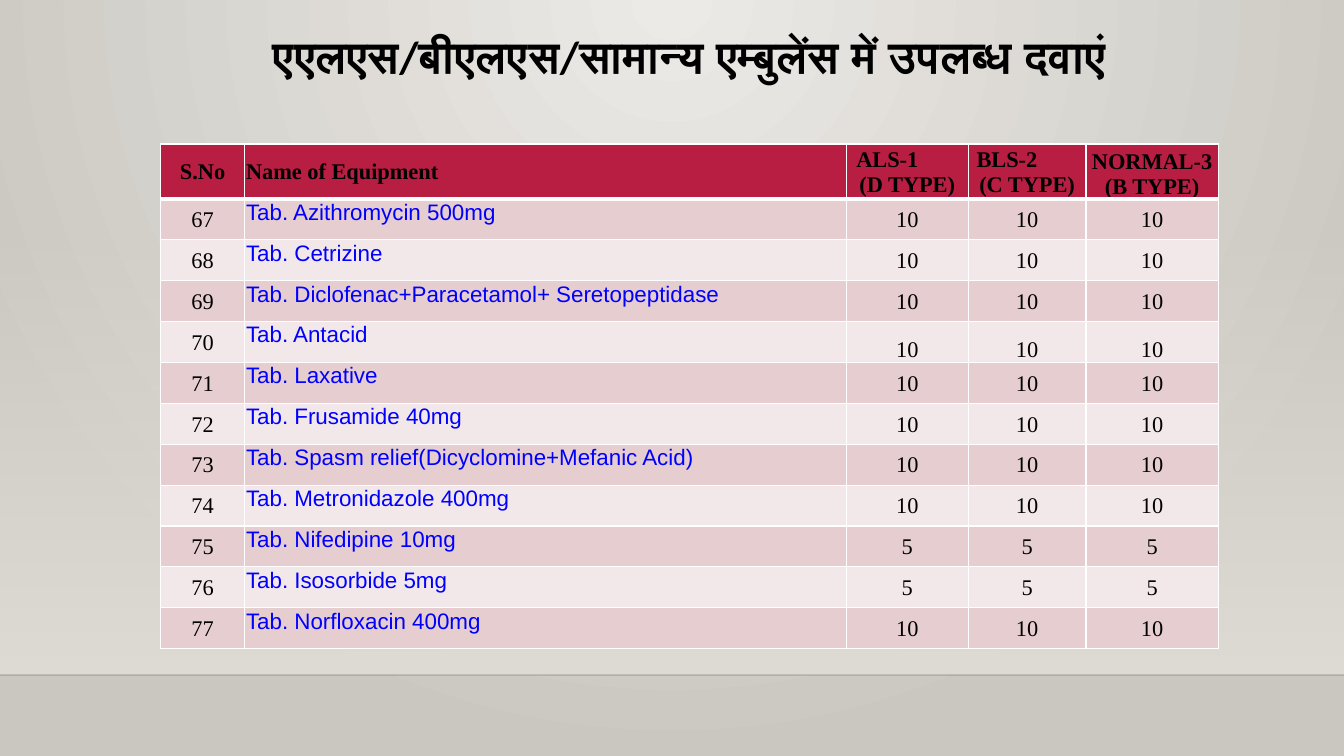
from lxml import etree
from pptx import Presentation
from pptx.dml.color import RGBColor
from pptx.enum.shapes import MSO_CONNECTOR, MSO_SHAPE
from pptx.enum.text import MSO_ANCHOR, PP_ALIGN
from pptx.oxml.ns import qn
from pptx.util import Cm, Pt

LEFT, CENTER = PP_ALIGN.LEFT, PP_ALIGN.CENTER
TOP, MIDDLE, BOTTOM = MSO_ANCHOR.TOP, MSO_ANCHOR.MIDDLE, MSO_ANCHOR.BOTTOM
RECTANGLE, STRAIGHT = MSO_SHAPE.RECTANGLE, MSO_CONNECTOR.STRAIGHT

COLORS = {
    "center": "ECEAE7", "edge": "CAC7C1", "wall": "DFDBD5", "floor_line": "000001",
    "text": "000000", "medicine": "0000FF", "border": "FFFFFF",
    "header": "B71E42", "odd_row": "E6CDCF", "even_row": "F3E8E9",
}
TITLE_FONT = {"name": "Calibri", "size": Pt(32), "bold": True}
HEADER_FONT = {"name": "Times New Roman", "size": Pt(16), "bold": True}
NUMBER_FONT = {"name": "Times New Roman", "size": Pt(16), "bold": False}
MEDICINE_FONT = {"name": "Arial", "size": Pt(16), "bold": False}

TITLE = "एएलएस/बीएलएस/सामान्य एम्बुलेंस में उपलब्ध दवाएं"
COLUMN_WIDTHS = [2.13, 15.16, 3.07, 2.97, 3.33]
ROW_HEIGHT = 1.03
# Lines, alignment, anchor and indent of the first line for each heading
HEADINGS = [
    (["S.No"], CENTER, MIDDLE, 0),
    (["Name of Equipment"], LEFT, MIDDLE, 0),
    (["ALS-1", "(D TYPE)"], CENTER, MIDDLE, 0.22),
    (["BLS-2", "(C TYPE)"], CENTER, MIDDLE, 0.18),
    (["NORMAL-3", "(B TYPE)"], CENTER, BOTTOM, 0),
]
FIRST_NUMBER = 67
LOW_ANCHOR_NUMBER = 70
MEDICINES = [
    ("Tab. Azithromycin 500mg", 10),
    ("Tab. Cetrizine", 10),
    ("Tab. Diclofenac+Paracetamol+ Seretopeptidase", 10),
    ("Tab. Antacid", 10),
    ("Tab. Laxative", 10),
    ("Tab. Frusamide 40mg", 10),
    ("Tab. Spasm relief(Dicyclomine+Mefanic Acid)", 10),
    ("Tab. Metronidazole 400mg", 10),
    ("Tab. Nifedipine 10mg", 5),
    ("Tab. Isosorbide 5mg", 5),
    ("Tab. Norfloxacin 400mg", 10),
]


def rgb(name):
    return RGBColor.from_string(COLORS[name])


def set_alpha(color_element, percent):
    etree.SubElement(color_element, qn("a:alpha"), val=str(percent * 1000))


def set_gradient(fill, names):
    fill.gradient()
    for stop, name in zip(fill.gradient_stops, names):
        stop.color.rgb = rgb(name)


def add_background(slide):
    """Radial gradient that spreads from the middle of the top edge."""
    set_gradient(slide.background.fill, ["center", "edge"])
    gradient = slide.element.find(".//" + qn("a:gradFill"))
    gradient.remove(gradient.find(qn("a:lin")))
    radial = etree.SubElement(gradient, qn("a:path"), path="circle")
    etree.SubElement(radial, qn("a:fillToRect"), l="43000", t="0", r="43000", b="100000")


def add_wall(slide, left, top, width, height):
    """Band that fades in downwards and ends in the floor line."""
    wall = slide.shapes.add_shape(RECTANGLE, left, top, width, height)
    wall.shadow.inherit = False
    wall.line.fill.background()
    set_gradient(wall.fill, ["wall", "wall"])
    wall.fill.gradient_angle = 270
    set_alpha(wall.element.find(".//" + qn("a:srgbClr")), 0)

    floor = top + height
    line = slide.shapes.add_connector(STRAIGHT, left, floor, left + width, floor)
    line.line.color.rgb = rgb("floor_line")
    line.line.width = Pt(1)
    set_alpha(line.element.find(".//" + qn("a:srgbClr")), 20)
    etree.SubElement(line.element.spPr, qn("a:effectLst"))


def write_paragraph(paragraph, text, font, color, alignment):
    paragraph.alignment = alignment
    run = paragraph.add_run()
    run.text = text
    for attribute, value in font.items():
        setattr(run.font, attribute, value)
    run.font.color.rgb = rgb(color)


def add_title(slide, left, top, width, height):
    frame = slide.shapes.add_textbox(left, top, width, height).text_frame
    frame.word_wrap = True
    frame.vertical_anchor = TOP
    write_paragraph(frame.paragraphs[0], TITLE, TITLE_FONT, "text", CENTER)
    frame.paragraphs[0].line_spacing = 0.9


def add_borders(cell, widths):
    properties = cell._tc.get_or_add_tcPr()
    for index, (side, width) in enumerate(widths.items()):
        border = etree.Element(qn("a:ln" + side), w=str(Pt(width)))
        solid = etree.SubElement(border, qn("a:solidFill"))
        etree.SubElement(solid, qn("a:srgbClr"), val=COLORS["border"])
        properties.insert(index, border)


def fill_cell(cell, lines, font, color, fill, alignment=CENTER, anchor=MIDDLE, **borders):
    for side in ("left", "right", "top"):
        setattr(cell, "margin_" + side, Cm(0.03))
    cell.margin_bottom = 0
    cell.vertical_anchor = anchor
    cell.fill.solid()
    cell.fill.fore_color.rgb = rgb(fill)
    add_borders(cell, {"L": 1, "R": 1, "T": 1, "B": 1, **borders})
    frame = cell.text_frame
    for index, line in enumerate(lines):
        paragraph = frame.add_paragraph() if index else frame.paragraphs[0]
        write_paragraph(paragraph, line, font, color, alignment)


def add_medicine_table(slide, left, top, width):
    row_count = len(MEDICINES) + 1
    table = slide.shapes.add_table(
        row_count, len(HEADINGS), left, top, width, Cm(ROW_HEIGHT * row_count)
    ).table
    for column, column_width in zip(table.columns, COLUMN_WIDTHS):
        column.width = Cm(column_width)
    for row in table.rows:
        row.height = Cm(ROW_HEIGHT)

    for column, (lines, alignment, anchor, indent) in enumerate(HEADINGS):
        cell = table.cell(0, column)
        fill_cell(cell, lines, HEADER_FONT, "text", "header", alignment, anchor, B=3)
        if indent:
            first_line = cell.text_frame.paragraphs[0]
            first_line.alignment = LEFT
            first_line._p.get_or_add_pPr().set("marL", str(Cm(indent)))

    for row, (medicine, quantity) in enumerate(MEDICINES, start=1):
        number = FIRST_NUMBER + row - 1
        fill = "odd_row" if row % 2 else "even_row"
        top_border = 3 if row == 1 else 1
        anchor = BOTTOM if number == LOW_ANCHOR_NUMBER else MIDDLE
        fill_cell(table.cell(row, 0), [str(number)], NUMBER_FONT, "text", fill, T=top_border)
        fill_cell(table.cell(row, 1), [medicine], MEDICINE_FONT, "medicine", fill,
                  LEFT, TOP, T=top_border)
        for column in range(2, len(HEADINGS)):
            fill_cell(table.cell(row, column), [str(quantity)], NUMBER_FONT, "text", fill,
                      anchor=anchor, T=top_border)


def main():
    presentation = Presentation()
    presentation.slide_width = Cm(33.87)
    presentation.slide_height = Cm(19.05)
    slide = presentation.slides.add_slide(presentation.slide_layouts[6])
    content_left, content_width = Cm(4.04), Cm(sum(COLUMN_WIDTHS))
    add_background(slide)
    add_wall(slide, 0, Cm(5.61), presentation.slide_width, Cm(11.4))
    add_title(slide, content_left, Cm(0.74), content_width, Cm(2.92))
    add_medicine_table(slide, content_left, Cm(3.63), content_width)
    presentation.save("out.pptx")


if __name__ == "__main__":
    main()
